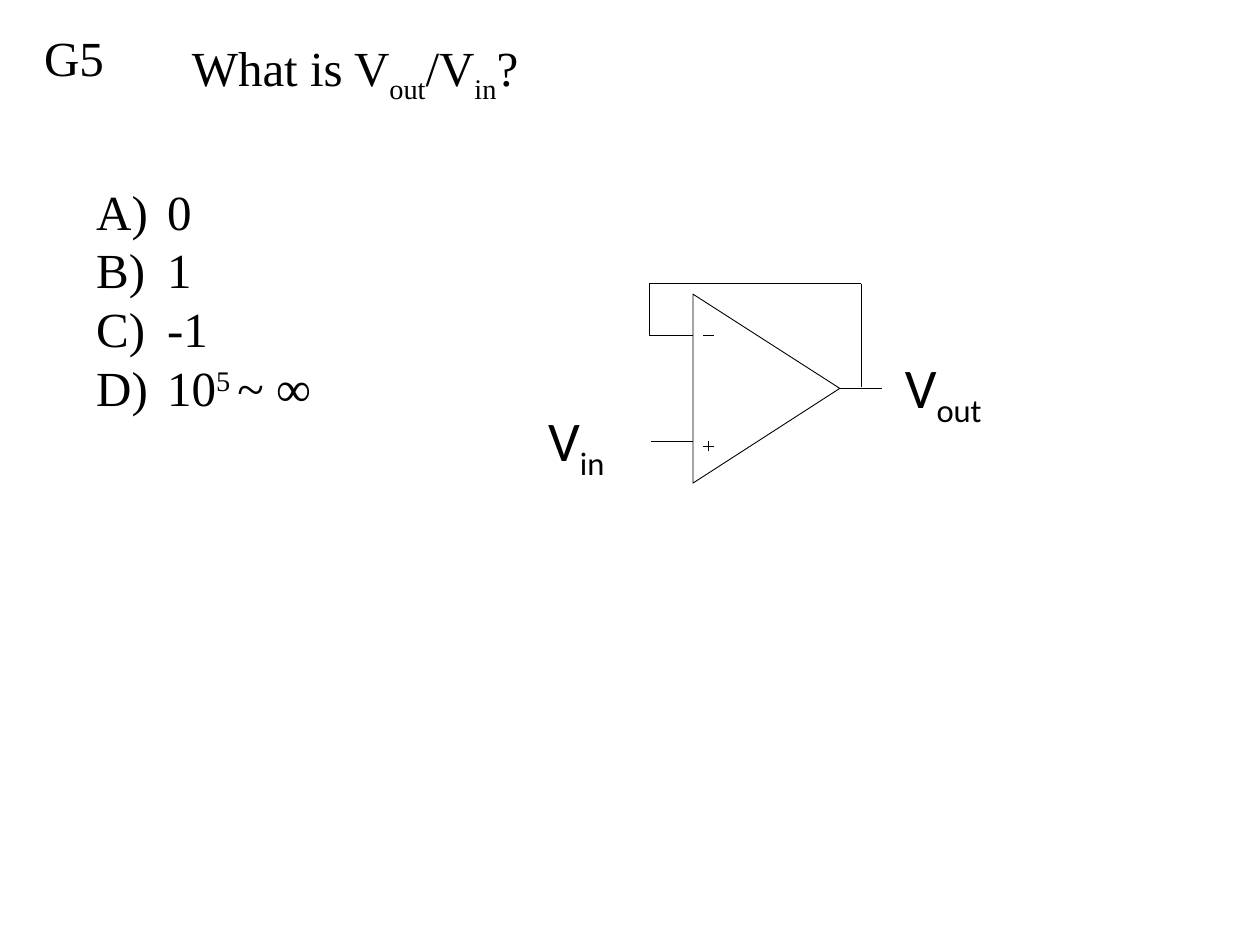
from typing import NamedTuple

from lxml.etree import SubElement
from pptx import Presentation
from pptx.dml.color import RGBColor
from pptx.enum.shapes import MSO_CONNECTOR, MSO_SHAPE
from pptx.enum.text import MSO_ANCHOR, MSO_AUTO_SIZE, PP_ALIGN
from pptx.oxml.ns import qn
from pptx.util import Cm, Pt

BLACK = "000000"
WHITE = "FFFFFF"
SERIF = "Times New Roman"
SANS = "Calibri"
SUBSCRIPT = -25
SUPERSCRIPT = 30


class Box(NamedTuple):
    left: float
    top: float
    width: float
    height: float


class Piece(NamedTuple):
    text: str
    baseline: int = 0


class Wire(NamedTuple):
    x1: float
    y1: float
    x2: float
    y2: float
    weight: float = 0.5


class Label(NamedTuple):
    box: Box
    subscript: str


TITLE = [Piece(" What is V"), Piece("out", SUBSCRIPT), Piece("/V"),
         Piece("in", SUBSCRIPT), Piece("?")]
ANSWERS = [[Piece("0")], [Piece("1")], [Piece("-1")],
           [Piece("10"), Piece("5 ", SUPERSCRIPT), Piece("~ ∞")]]

# Op-amp geometry in centimetres
INPUT_X, BODY_X, TIP_X, OUTPUT_X = 13.12, 13.97, 16.93, 17.78
TOP_Y, MINUS_Y, TIP_Y, PLUS_Y, BOTTOM_Y = 5.93, 6.77, 7.83, 8.89, 9.74
FEEDBACK_X, FEEDBACK_Y = 17.36, 5.72
SIGN_X, SIGN_SIZE = 14.18, 0.21
SIGN_MIDDLE = SIGN_X + SIGN_SIZE / 2

WIRES = [
    Wire(INPUT_X, MINUS_Y, BODY_X, MINUS_Y),
    Wire(INPUT_X, PLUS_Y, BODY_X, PLUS_Y),
    Wire(TIP_X, TIP_Y, OUTPUT_X, TIP_Y),
    Wire(FEEDBACK_X, FEEDBACK_Y, FEEDBACK_X, 7.8, 0.75),
]
SIGNS = [
    Wire(SIGN_X, MINUS_Y, SIGN_X + SIGN_SIZE, MINUS_Y),
    Wire(SIGN_MIDDLE, PLUS_Y, SIGN_MIDDLE, PLUS_Y + SIGN_SIZE),
    Wire(SIGN_X, PLUS_Y + SIGN_SIZE / 2, SIGN_X + SIGN_SIZE, PLUS_Y + SIGN_SIZE / 2),
]
LABELS = [Label(Box(10.8, 8.05, 1.73, 1.63), "in"),
          Label(Box(17.99, 6.99, 2.16, 1.63), "out")]


def color(value: str) -> RGBColor:
    return RGBColor.from_string(value)


def lengths(box: Box) -> list[Cm]:
    return [Cm(value) for value in box]


def write(paragraph, pieces: list[Piece], font_name: str, size: float) -> None:
    paragraph.alignment = PP_ALIGN.LEFT
    for piece in pieces:
        run = paragraph.add_run()
        run.text = piece.text
        run.font.name = font_name
        run.font.size = Pt(size)
        run.font.color.rgb = color(BLACK)
        if piece.baseline:
            run.font._element.set("baseline", str(piece.baseline * 1000))


def fit_frame(frame, wrap: bool) -> None:
    frame.word_wrap = wrap
    frame.auto_size = MSO_AUTO_SIZE.SHAPE_TO_FIT_TEXT
    frame.vertical_anchor = MSO_ANCHOR.TOP


def add_text(shapes, box: Box, pieces: list[Piece], wrap: bool) -> None:
    frame = shapes.add_textbox(*lengths(box)).text_frame
    fit_frame(frame, wrap)
    write(frame.paragraphs[0], pieces, SERIF, 28)


def add_answers(shapes, box: Box, answers: list[list[Piece]]) -> None:
    """Add the lettered choices, one line below the top of the box."""
    frame = shapes.add_textbox(*lengths(box)).text_frame
    fit_frame(frame, True)
    frame.margin_top = Cm(1.32)
    for index, pieces in enumerate(answers):
        paragraph = frame.add_paragraph() if index else frame.paragraphs[0]
        write(paragraph, pieces, SERIF, 28)
        properties = paragraph._p.get_or_add_pPr()
        properties.set("marL", str(Cm(1.43)))
        properties.set("indent", str(-Cm(1.43)))
        SubElement(properties, qn("a:buFont"), typeface=SERIF)
        SubElement(properties, qn("a:buAutoNum"), type="alphaUcParenR")


def add_wire(shapes, wire: Wire, kind=MSO_CONNECTOR.STRAIGHT):
    connector = shapes.add_connector(
        kind, Cm(wire.x1), Cm(wire.y1), Cm(wire.x2), Cm(wire.y2))
    connector.line.color.rgb = color(BLACK)
    connector.line.width = Pt(wire.weight)
    SubElement(connector._element.spPr, qn("a:effectLst"))
    return connector


def add_feedback(shapes) -> None:
    """Add the elbow that rises at the inverting input before turning right."""
    elbow = add_wire(shapes, Wire(INPUT_X, MINUS_Y, FEEDBACK_X, FEEDBACK_Y, 0.75),
                     MSO_CONNECTOR.ELBOW)
    geometry = elbow._element.spPr.find(qn("a:prstGeom"))
    guides = geometry.find(qn("a:avLst"))
    if guides is None:
        guides = SubElement(geometry, qn("a:avLst"))
    SubElement(guides, qn("a:gd"), name="adj1", fmla="val -700")


def add_amplifier_body(shapes) -> None:
    builder = shapes.build_freeform(Cm(TIP_X), Cm(TIP_Y))
    builder.add_line_segments(
        [(Cm(BODY_X), Cm(BOTTOM_Y)), (Cm(BODY_X), Cm(TOP_Y))], close=True)
    triangle = builder.convert_to_shape()
    triangle.shadow.inherit = False
    triangle.fill.background()
    triangle.line.color.rgb = color(BLACK)
    triangle.line.width = Pt(0.5)


def add_voltage_label(shapes, label: Label) -> None:
    shape = shapes.add_shape(MSO_SHAPE.RECTANGLE, *lengths(label.box))
    shape.shadow.inherit = False
    shape.fill.background()
    shape.line.color.rgb = color(WHITE)
    shape.line.width = Pt(0.75)
    fit_frame(shape.text_frame, False)
    write(shape.text_frame.paragraphs[0],
          [Piece("V"), Piece(label.subscript, SUBSCRIPT)], SANS, 32)


def main() -> None:
    presentation = Presentation()
    presentation.slide_width = Cm(25.4)
    presentation.slide_height = Cm(19.05)
    slide = presentation.slides.add_slide(presentation.slide_layouts[6])

    add_text(slide.shapes, Box(3.39, 0.64, 20.96, 1.45), TITLE, True)
    add_text(slide.shapes, Box(0.64, 0.43, 1.73, 1.45), [Piece("G5")], False)

    circuit = slide.shapes.add_group_shape().shapes
    add_amplifier_body(circuit)
    for wire in WIRES + SIGNS:
        add_wire(circuit, wire)
    for label in LABELS:
        add_voltage_label(circuit, label)
    add_feedback(circuit)

    add_answers(slide.shapes, Box(1.69, 2.33, 22.86, 10.58), ANSWERS)
    presentation.save("out.pptx")


if __name__ == "__main__":
    main()
